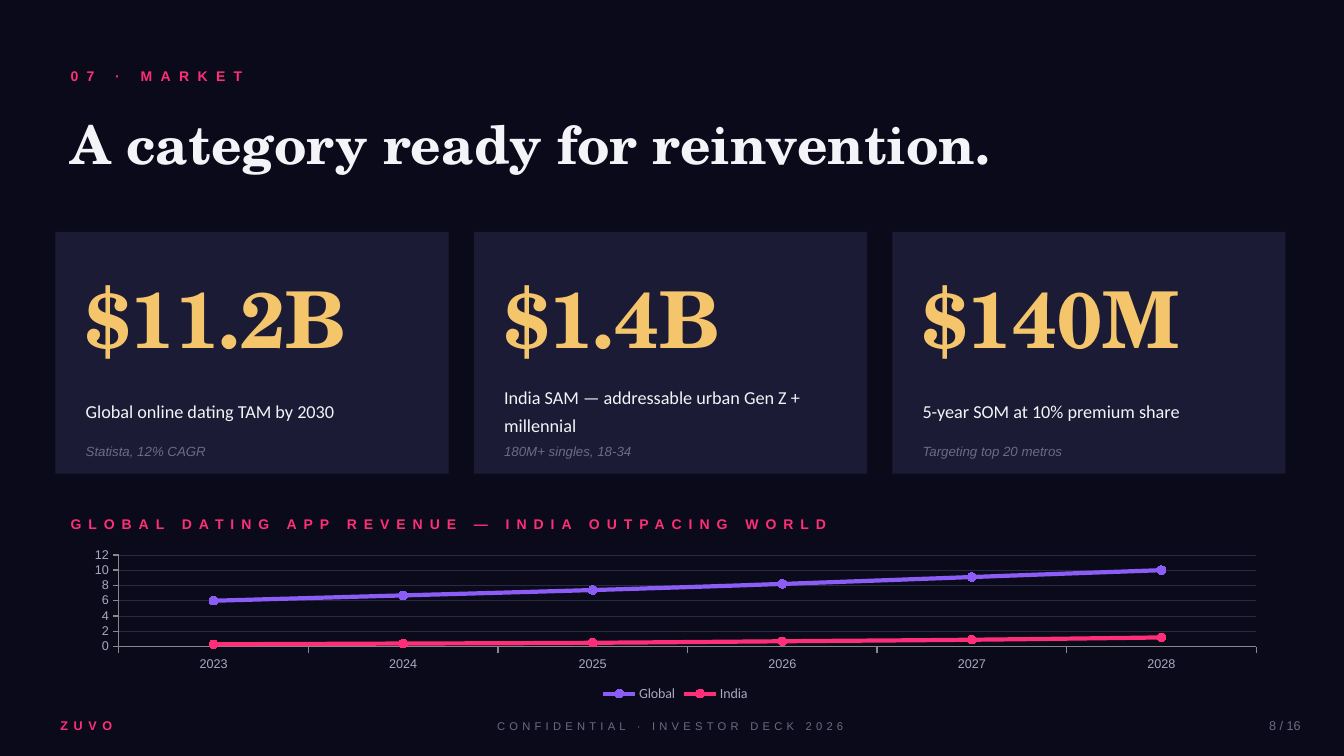
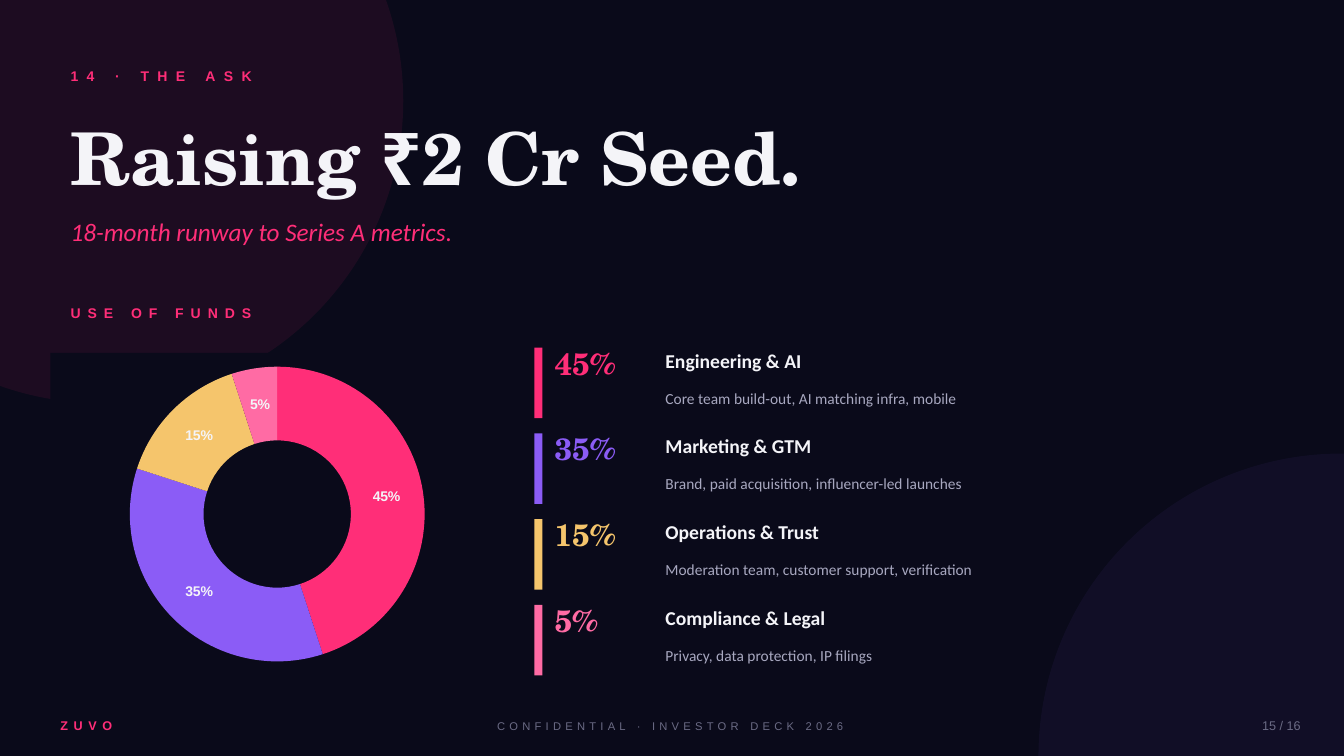
from dataclasses import dataclass, replace

from lxml import etree
from pptx import Presentation
from pptx.chart.data import CategoryChartData
from pptx.dml.color import RGBColor
from pptx.enum.chart import (XL_CHART_TYPE, XL_LEGEND_POSITION, XL_MARKER_STYLE,
                             XL_TICK_LABEL_POSITION, XL_TICK_MARK)
from pptx.enum.shapes import MSO_SHAPE
from pptx.enum.text import MSO_ANCHOR, MSO_AUTO_SIZE, PP_ALIGN
from pptx.oxml import parse_xml
from pptx.oxml.ns import nsdecls, qn
from pptx.util import Inches, Pt


@dataclass(frozen=True)
class Style:
    size: float
    font: str
    color: str
    bold: bool = False
    italic: bool = False
    spacing: float = 0
    line: float = 1
    align: PP_ALIGN = PP_ALIGN.LEFT


class Theme:
    serif, sans, label = "TeX Gyre Schola", "Calibri", "Arial"
    bg, panel, grid, axis = "0A0A1A", "1B1B36", "2A2A45", "888888"
    text, soft, muted = "F4F4F8", "A8A8C0", "6B6B85"
    pink, violet, gold, rose = "FF2E78", "8B5CF6", "F5C56C", "FF6BA4"

    eyebrow = Style(10, label, pink, bold=True, spacing=6)
    heading = replace(eyebrow, spacing=5)
    title = Style(38, serif, text, bold=True)
    hero = replace(title, size=52)
    tagline = Style(18, sans, pink, italic=True)
    figure = Style(56, serif, gold, bold=True)
    caption = Style(13, sans, text, line=1.3)
    source = Style(9.5, label, muted, italic=True)
    share = Style(22, serif, pink, bold=True)
    item = Style(14, sans, text, bold=True)
    detail = Style(11, sans, soft)
    brand = Style(9, label, pink, bold=True, spacing=4)
    notice = Style(8, label, muted, spacing=3, align=PP_ALIGN.CENTER)
    page = Style(9, label, muted, align=PP_ALIGN.RIGHT)


rgb = RGBColor.from_string


def add_text(s, box, text, style, sp=None):
    """Write text in a new text box, or in the placeholder given as sp."""
    box = [Inches(v) for v in box]
    sp = sp or s.shapes.add_textbox(*box)
    sp.left, sp.top, sp.width, sp.height = box
    tf = sp.text_frame
    tf.text = text
    tf.word_wrap = True
    tf.auto_size = MSO_AUTO_SIZE.NONE
    tf.vertical_anchor = MSO_ANCHOR.MIDDLE
    tf.margin_left = tf.margin_top = tf.margin_right = tf.margin_bottom = 0
    p = tf.paragraphs[0]
    p.alignment = style.align
    p.line_spacing = style.line
    r = p.runs[0]
    r.font.size, r.font.name = Pt(style.size), style.font
    r.font.bold, r.font.italic = style.bold, style.italic
    r.font.color.rgb = rgb(style.color)
    if style.spacing:
        r.font._element.set("spc", str(int(style.spacing * 100)))


def add_block(s, kind, box, color):
    sp = s.shapes.add_shape(kind, *[Inches(v) for v in box])
    sp.shadow.inherit = False
    sp.fill.solid()
    sp.fill.fore_color.rgb = rgb(color)
    sp.line.fill.background()
    return sp


prs = Presentation()
prs.slide_width, prs.slide_height = Inches(13.33), Inches(7.5)
fill = prs.slide_master.background.fill
fill.solid()
fill.fore_color.rgb = rgb(Theme.bg)

# Shared frame: eyebrow, title and footer
frames = [
    ("07 · MARKET", "A category ready for reinvention.", Theme.title, (0.7, 1, 12, 0.85), 8),
    ("14 · THE ASK", "Raising ₹2 Cr Seed.", Theme.hero, (0.7, 1.05, 12, 1), 15),
]
for eyebrow, title, style, box, number in frames:
    s = prs.slides.add_slide(prs.slide_layouts[5])
    add_text(s, box, title, style, s.shapes.title)
    add_text(s, (0.7, 0.6, 8, 0.3), eyebrow, Theme.eyebrow)
    add_text(s, (0.6, 7.05, 1, 0.3), "ZUVO", Theme.brand)
    add_text(s, (4.65, 7.05, 4, 0.3), "CONFIDENTIAL · INVESTOR DECK 2026", Theme.notice)
    add_text(s, (12.1, 7.05, 0.8, 0.3), f"{number} / 16", Theme.page)
market, ask = prs.slides

# Market: three figure cards
cards = [
    ("$11.2B", "Global online dating TAM by 2030", "Statista, 12% CAGR"),
    ("$1.4B", "India SAM — addressable urban Gen Z + millennial", "180M+ singles, 18-34"),
    ("$140M", "5-year SOM at 10% premium share", "Targeting top 20 metros"),
]
for i, (figure, caption, source) in enumerate(cards):
    x = 0.55 + 4.15 * i
    add_block(market, MSO_SHAPE.RECTANGLE, (x, 2.3, 3.9, 2.4), Theme.panel)
    add_text(market, (x + 0.3, 2.6, 3.3, 1.1), figure, Theme.figure)
    add_text(market, (x + 0.3, 3.75, 3.3, 0.6), caption, Theme.caption)
    add_text(market, (x + 0.3, 4.35, 3.3, 0.25), source, Theme.source)

# Market: revenue line chart
add_text(market, (0.7, 5.05, 12, 0.3),
         "GLOBAL DATING APP REVENUE — INDIA OUTPACING WORLD", Theme.heading)
data = CategoryChartData()
data.categories = ["2023", "2024", "2025", "2026", "2027", "2028"]
data.add_series("Global", [6, 6.7, 7.4, 8.2, 9.1, 10])
data.add_series("India", [0.3, 0.4, 0.5, 0.7, 0.9, 1.2])
revenue = market.shapes.add_chart(XL_CHART_TYPE.LINE_MARKERS, Inches(0.7), Inches(5.4),
                                  Inches(12), Inches(1.6), data).chart
for series, color in zip(revenue.plots[0].series, (Theme.violet, Theme.pink)):
    series.smooth = True
    series.format.line.width = Pt(3)
    series.format.line.color.rgb = rgb(color)
    marker = series.marker
    marker.style, marker.size = XL_MARKER_STYLE.CIRCLE, 6
    marker.format.fill.solid()
    marker.format.fill.fore_color.rgb = rgb(color)
    marker.format.line.color.rgb = rgb(color)
for axis in (revenue.category_axis, revenue.value_axis):
    axis.major_tick_mark = XL_TICK_MARK.OUTSIDE
    axis.minor_tick_mark = XL_TICK_MARK.NONE
    axis.format.line.width = Pt(1)
    axis.format.line.color.rgb = rgb(Theme.axis)
    font = axis.tick_labels.font
    font.size, font.name = Pt(9), Theme.label
    font.color.rgb = rgb(Theme.soft)
revenue.category_axis.tick_label_position = XL_TICK_LABEL_POSITION.LOW
gridline = revenue.value_axis.major_gridlines.format.line
gridline.width = Pt(0.5)
gridline.color.rgb = rgb(Theme.grid)
revenue.has_legend = True
revenue.legend.position = XL_LEGEND_POSITION.BOTTOM
revenue.legend.include_in_layout = False
revenue.legend.font.size = Pt(10)
revenue.legend.font.color.rgb = rgb(Theme.soft)

# Ask: translucent circles behind the text
for x, y, color, alpha in [(-2, -2, Theme.pink, 8), (10.3, 4.5, Theme.violet, 6)]:
    sp = add_block(ask, MSO_SHAPE.OVAL, (x, y, 6, 6), color)
    clr = sp.element.spPr.find(qn("a:solidFill"))[0]
    etree.SubElement(clr, qn("a:alpha")).set("val", str(alpha * 1000))
    ask.shapes.title.element.addprevious(sp.element)

# Ask: use of funds, as a list and a doughnut
add_text(ask, (0.7, 2.05, 12, 0.5), "18-month runway to Series A metrics.", Theme.tagline)
add_text(ask, (0.7, 2.95, 8, 0.3), "USE OF FUNDS", Theme.heading)
funds = [
    (45, "Engineering & AI", "Core team build-out, AI matching infra, mobile", Theme.pink),
    (35, "Marketing & GTM", "Brand, paid acquisition, influencer-led launches", Theme.violet),
    (15, "Operations & Trust", "Moderation team, customer support, verification", Theme.gold),
    (5, "Compliance & Legal", "Privacy, data protection, IP filings", Theme.rose),
]
data = CategoryChartData()
data.categories = [name for _, name, _, _ in funds]
data.add_series("Series 1", [percent for percent, _, _, _ in funds])
doughnut = ask.shapes.add_chart(XL_CHART_TYPE.DOUGHNUT, Inches(0.5), Inches(3.5),
                                Inches(4.5), Inches(3.2), data).chart
doughnut.has_legend = False
plot = doughnut.plots[0]
plot._element.find(qn("c:holeSize")).set("val", "60")
plot.has_data_labels = True
labels = plot.data_labels
labels.show_percentage, labels.show_value = True, False
labels.number_format, labels.number_format_is_linked = "0%", False
labels.font.size, labels.font.name, labels.font.bold = Pt(10), Theme.label, True
labels.font.color.rgb = rgb(Theme.text)

for i, (percent, name, detail, color) in enumerate(funds):
    point = plot.series[0].points[i].format
    point.fill.solid()
    point.fill.fore_color.rgb = rgb(color)
    point.line.fill.background()
    y = 3.4 + 0.85 * i
    add_block(ask, MSO_SHAPE.RECTANGLE, (5.3, y + 0.05, 0.08, 0.7), color)
    add_text(ask, (5.5, y, 1, 0.4), f"{percent}%", replace(Theme.share, color=color))
    add_text(ask, (6.6, y, 6.4, 0.35), name, Theme.item)
    add_text(ask, (6.6, y + 0.35, 6.4, 0.4), detail, Theme.detail)

# Both charts: base font and dark background
for chart in (revenue, doughnut):
    chart.has_title = False
    chart.font.size, chart.font.name = Pt(10), Theme.sans
    backdrop = (f'<c:spPr {nsdecls("c", "a")}><a:solidFill><a:srgbClr val="{Theme.bg}"/>'
                '</a:solidFill><a:ln><a:noFill/></a:ln></c:spPr>')
    body = chart.element.find(qn("c:chart"))
    body.addnext(parse_xml(backdrop))
    body.find(qn("c:plotArea")).append(parse_xml(backdrop))

prs.save("out.pptx")
